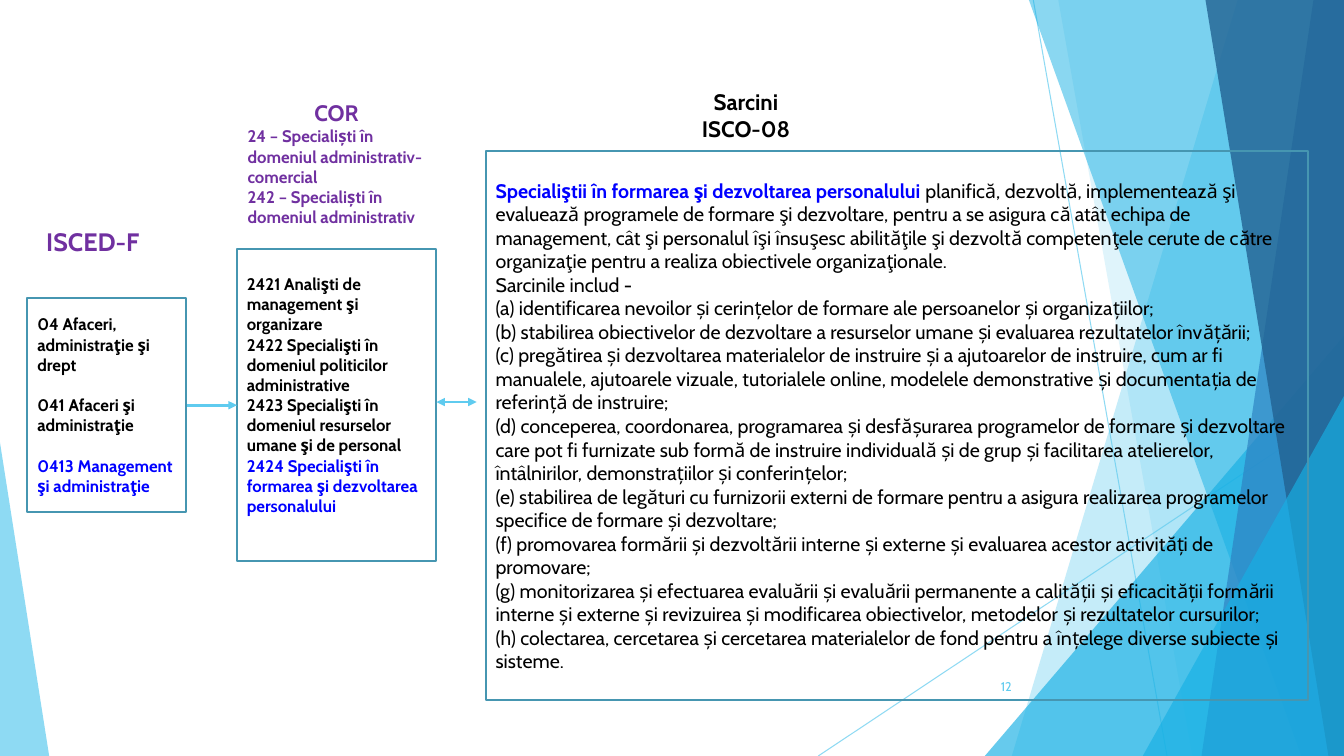
from lxml import etree
from pptx import Presentation
from pptx.dml.color import RGBColor
from pptx.enum.shapes import MSO_CONNECTOR as Connector, MSO_SHAPE as Preset
from pptx.enum.text import MSO_ANCHOR as Anchor, PP_ALIGN as Align
from pptx.oxml.ns import qn
from pptx.util import Cm, Pt

WIDTH, HEIGHT = 33.87, 19.05
FONT = "Cabin"
BLACK, BLUE, PURPLE, SKY, TEAL = "000000", "0000FF", "7030A0", "5FCBEF", "4696B1"
AZURE = "17B0E4"

# Start x, start y, end x, end y
RAYS = [(26.04, 0, 29.41, HEIGHT), (WIDTH, 10.24, 20.62, HEIGHT)]
# Bands reach the right edge: left x at top, left x at bottom, colour, opacity
# Triangles stand on the bottom edge: left, top, width, apex, colour, opacity
FACETS = [
    ("band", (31.19, 25.5), SKY, 36),
    ("band", (26.67, 30.05), SKY, 20),
    ("triangle", (24.82, 8.46, 9.05, 1), AZURE, 66),
    ("band", (25.93, 32.79), AZURE, 50),
    ("band", (33.1, 30.28), "2E83C3", 70),
    ("band", (30.38, 33.48), "226292", 80),
    ("triangle", (28.8, 9.98, 5.07, 1), AZURE, 66),
    ("triangle", (0, 11.15, 1.24, 0), SKY, 70),
]

# Each paragraph is a list of runs: text, colour, bold
FIELDS = [
    [("04 Afaceri, administraţie şi drept", BLACK, True)],
    [("041 Afaceri şi administraţie", BLACK, True)],
    [("0413 Management şi administraţie", BLUE, True)],
]
OCCUPATIONS = [
    [("2421 Analişti de management şi organizare", BLACK, True)],
    [("2422 Specialişti în domeniul politicilor administrative", BLACK, True)],
    [("2423 Specialişti în domeniul resurselor umane şi de personal", BLACK, True)],
    [("2424 Specialişti în formarea şi dezvoltarea personalului", BLUE, True)],
]
TASK_LINES = [
    "Sarcinile includ -",
    "(a) identificarea nevoilor și cerințelor de formare ale persoanelor și organizațiilor;",
    "(b) stabilirea obiectivelor de dezvoltare a resurselor umane și evaluarea rezultatelor "
    "învățării;",
    "(c) pregătirea și dezvoltarea materialelor de instruire și a ajutoarelor de instruire, cum "
    "ar fi manualele, ajutoarele vizuale, tutorialele online, modelele demonstrative și "
    "documentația de referință de instruire;",
    "(d) conceperea, coordonarea, programarea și desfășurarea programelor de formare și "
    "dezvoltare care pot fi furnizate sub formă de instruire individuală și de grup și "
    "facilitarea atelierelor, întâlnirilor, demonstrațiilor și conferințelor;",
    "(e) stabilirea de legături cu furnizorii externi de formare pentru a asigura realizarea "
    "programelor specifice de formare și dezvoltare;",
    "(f) promovarea formării și dezvoltării interne și externe și evaluarea acestor activități "
    "de promovare;",
    "(g) monitorizarea și efectuarea evaluării și evaluării permanente a calității și "
    "eficacității formării interne și externe și revizuirea și modificarea obiectivelor, "
    "metodelor și rezultatelor cursurilor;",
    "(h) colectarea, cercetarea și cercetarea materialelor de fond pentru a înțelege diverse "
    "subiecte și sisteme.",
]
TASKS = [
    [
        ("Specialiştii în formarea şi dezvoltarea personalului", BLUE, True),
        (" planifică, dezvoltă, implementează şi evaluează programele de formare şi dezvoltare, "
         "pentru a se asigura că atât echipa de management, cât şi personalul îşi însuşesc "
         "abilităţile şi dezvoltă competenţele cerute de către organizaţie pentru a realiza "
         "obiectivele organizaţionale.", BLACK, False),
    ],
    *[[(line, BLACK, False)] for line in TASK_LINES],
]
COR_TITLE = [[("COR", PURPLE, True)]]
COR_GROUPS = [
    [("24 – Specialiști în domeniul administrativ-comercial", PURPLE, True)],
    [("242 – Specialiști în domeniul administrativ", PURPLE, True)],
]
TASKS_TITLE = [[("Sarcini", BLACK, True)], [("ISCO-08", BLACK, True)]]

presentation = Presentation()
presentation.slide_width, presentation.slide_height = Cm(WIDTH), Cm(HEIGHT)
slide = presentation.slides.add_slide(presentation.slide_layouts[6])
shapes = slide.shapes


def color(hex_color):
    return RGBColor.from_string(hex_color)


def set_opacity(fill_parent, percent):
    """Make the first solid colour below the element partly transparent."""
    rgb = next(fill_parent.iter(qn("a:srgbClr")))
    etree.SubElement(rgb, qn("a:alpha")).set("val", str(percent * 1000))


def add_line(start_x, start_y, end_x, end_y, weight, opacity=100, arrows=()):
    line = shapes.add_connector(
        Connector.STRAIGHT, Cm(start_x), Cm(start_y), Cm(end_x), Cm(end_y))
    line.line.color.rgb = color(SKY)
    line.line.width = Pt(weight)
    outline = line.line._get_or_add_ln()
    if opacity < 100:
        set_opacity(outline, opacity)
    for end in arrows:
        etree.SubElement(outline, qn(f"a:{end}")).set("type", "triangle")
    etree.SubElement(line._element.spPr, qn("a:effectLst"))


def add_facet(kind, geometry, hex_color, opacity):
    if kind == "band":
        top_x, bottom_x = geometry
        builder = shapes.build_freeform(Cm(top_x), 0)
        corners = [(WIDTH, 0), (WIDTH, HEIGHT), (bottom_x, HEIGHT)]
        builder.add_line_segments([(Cm(x), Cm(y)) for x, y in corners], close=True)
        facet = builder.convert_to_shape()
    else:
        left, top, width, apex = geometry
        facet = shapes.add_shape(
            Preset.ISOSCELES_TRIANGLE, Cm(left), Cm(top), Cm(width), Cm(HEIGHT - top))
        facet.adjustments[0] = apex
    facet.shadow.inherit = False
    facet.fill.solid()
    facet.fill.fore_color.rgb = color(hex_color)
    set_opacity(facet._element.spPr, opacity)
    facet.line.fill.background()


def add_text(box, groups, border=None, fill=None, gap=0, bottom=0.13):
    """Write groups of (size, alignment, paragraphs) in a middle-anchored rectangle."""
    shape = shapes.add_shape(Preset.RECTANGLE, *[Cm(length) for length in box])
    shape.shadow.inherit = False
    if fill:
        shape.fill.solid()
        shape.fill.fore_color.rgb = color(fill)
    else:
        shape.fill.background()
    if border:
        shape.line.color.rgb = color(border)
        shape.line.width = Pt(1.5)
    else:
        shape.line.fill.background()
    frame = shape.text_frame
    frame.word_wrap = True
    frame.vertical_anchor = Anchor.MIDDLE
    frame.margin_bottom = Cm(bottom)
    rows = [(size, align, runs) for size, align, rows in groups for runs in rows]
    for index, (size, align, runs) in enumerate(rows):
        paragraph = frame.add_paragraph() if index else frame.paragraphs[0]
        paragraph.alignment = align
        if index and gap:
            paragraph.space_before = Pt(gap)
        for text, hex_color, bold in runs:
            run = paragraph.add_run()
            run.text = text
            run.font.name, run.font.size, run.font.bold = FONT, Pt(size), bold
            run.font.color.rgb = color(hex_color)


for ray in RAYS:
    add_line(*ray, weight=0.75, opacity=70)
for facet_values in FACETS:
    add_facet(*facet_values)

add_text((23.85, 16.79, 1.9, 1.02), [(9, Align.RIGHT, [[("12", SKY, False)]])])
add_text((0.69, 7.52, 3.99, 5.38), [(12, Align.LEFT, FIELDS)], border=TEAL, gap=14.5)
add_text((12.24, 3.81, 20.73, 13.84), [(14, Align.LEFT, TASKS)], border=TEAL)
add_text((5.97, 6.27, 5.03, 7.87), [(12, Align.LEFT, OCCUPATIONS)], border=TEAL, bottom=0.64)
add_line(4.7, 10.21, 5.97, 10.21, weight=0, arrows=["tailEnd"])
add_text((0.69, 5.33, 3.3, 1.5), [(18, Align.CENTER, [[("ISCED-F", PURPLE, True)]])])
add_text((16.31, 2.16, 4.98, 1.5), [(16, Align.CENTER, TASKS_TITLE)])
add_line(11, 10.13, 12.01, 10.13, weight=1, arrows=["headEnd", "tailEnd"])
add_text((5.99, 2.26, 4.98, 3.71),
         [(16, Align.CENTER, COR_TITLE), (12, Align.LEFT, COR_GROUPS)], fill="FFFFFF")

presentation.save("out.pptx")
